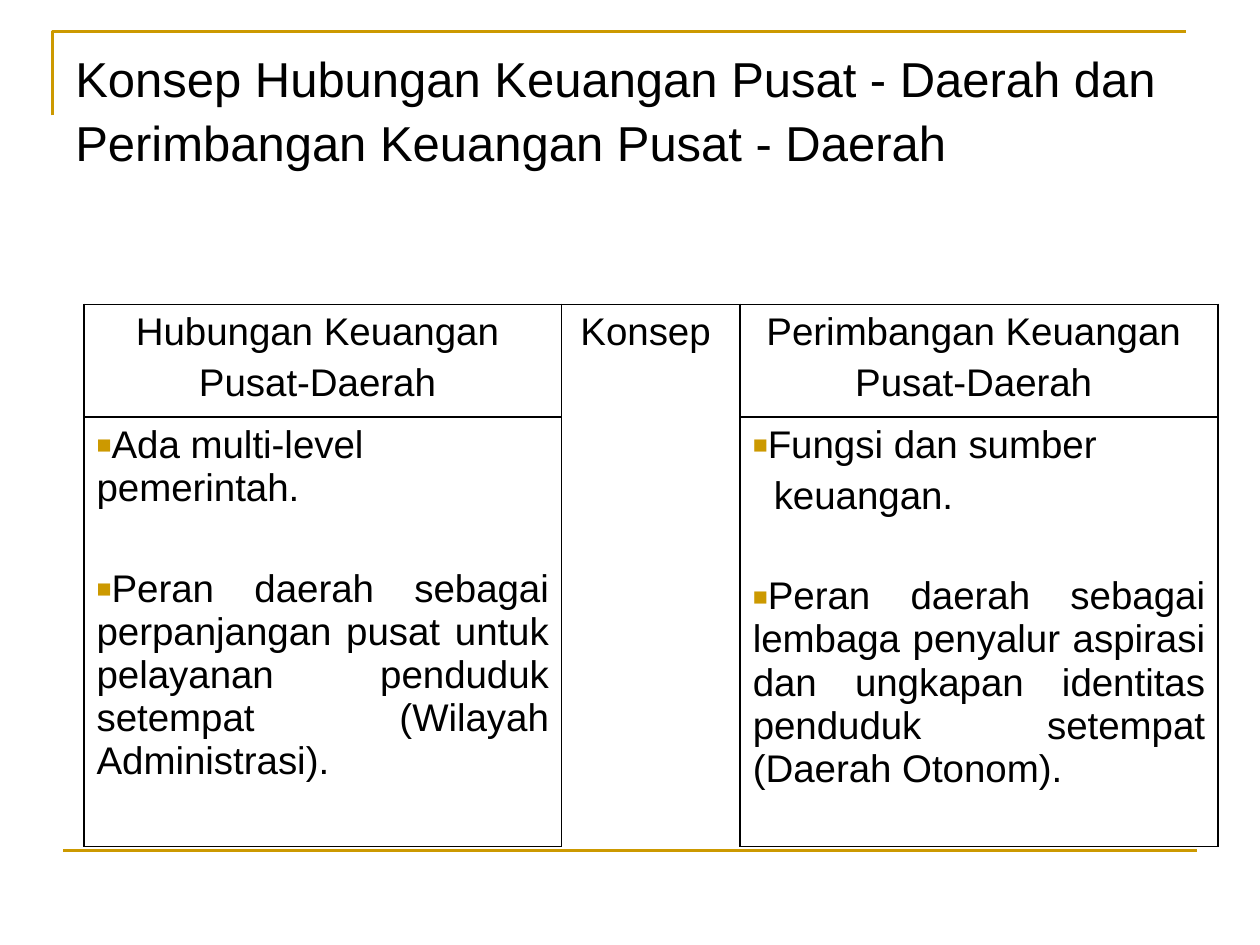
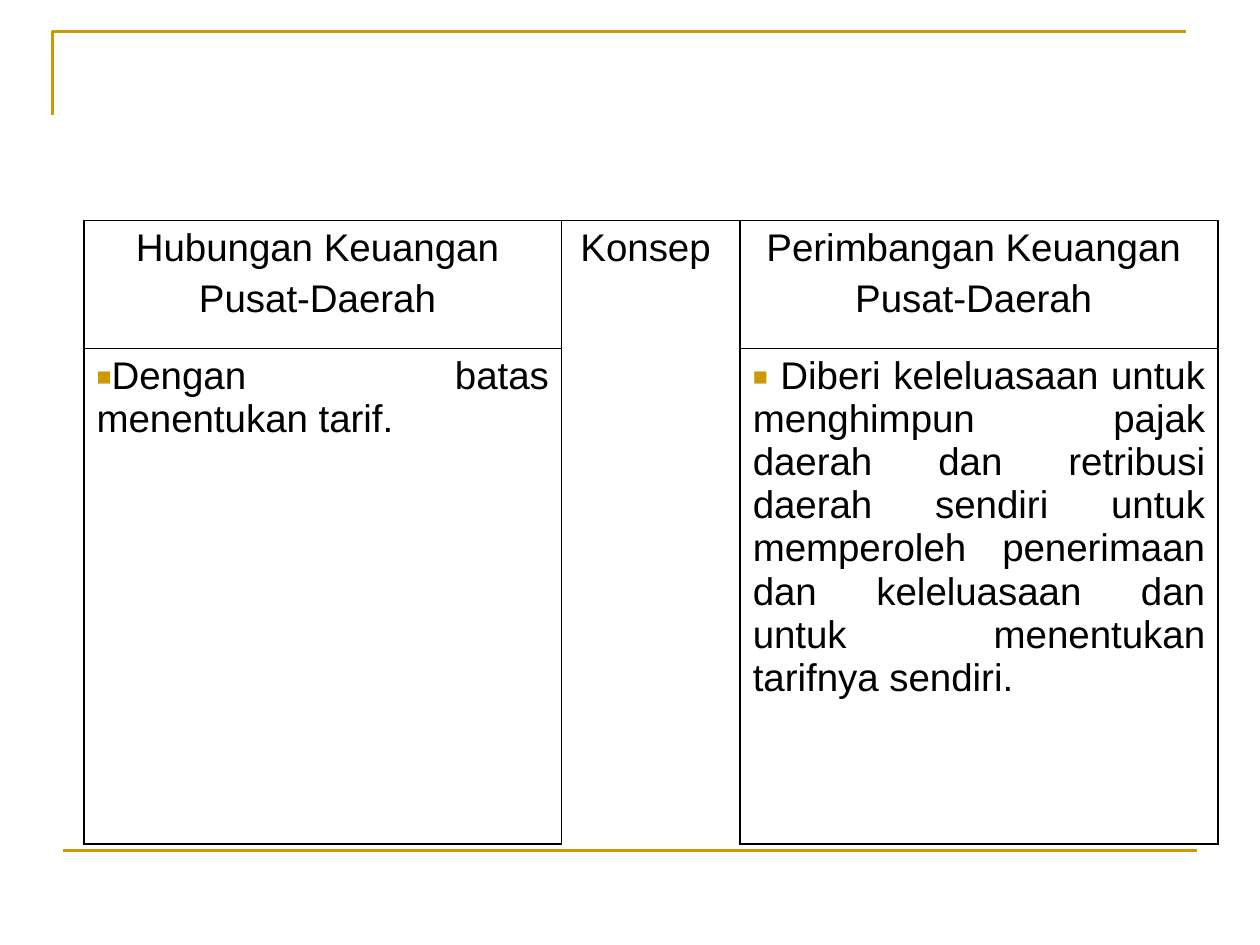
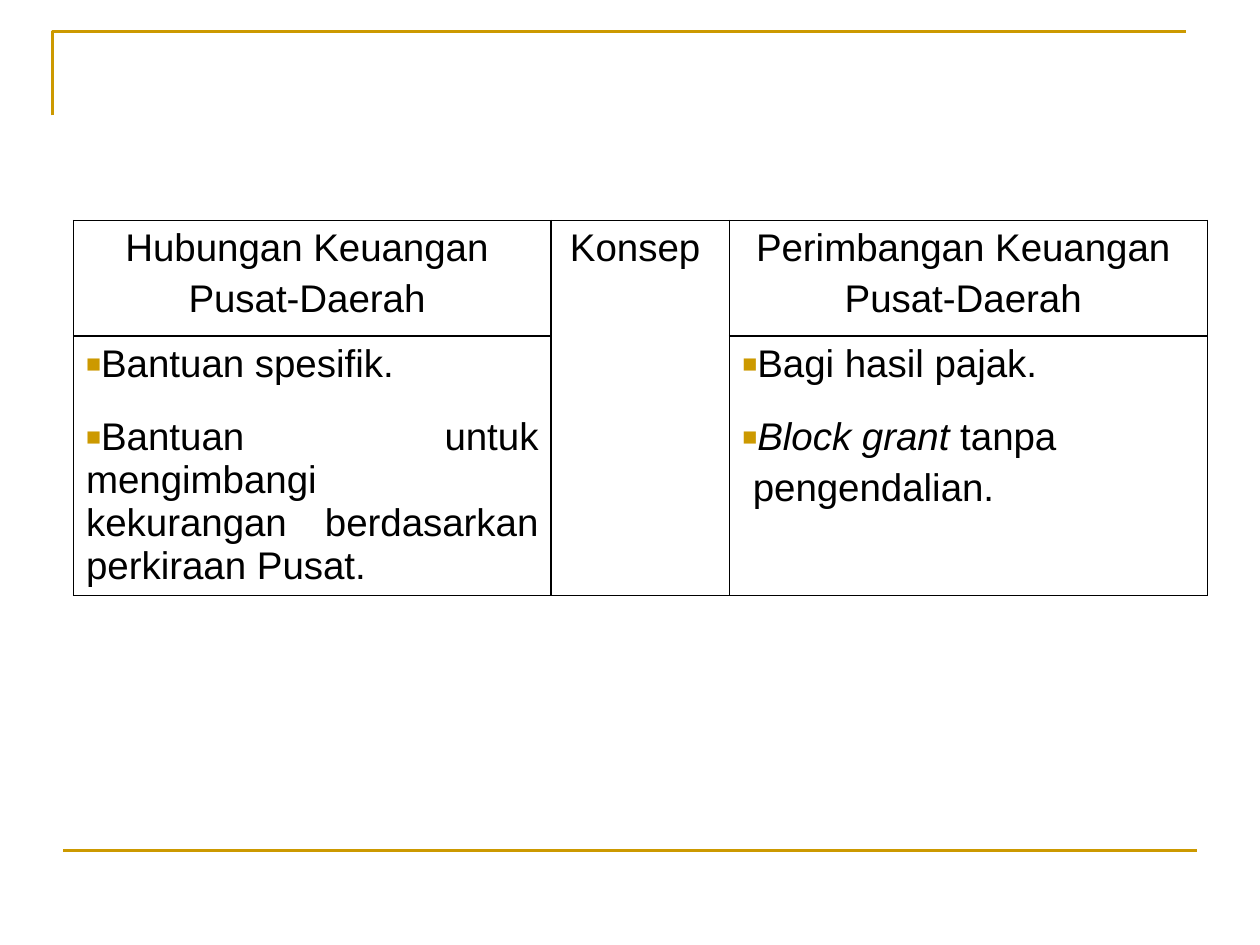
from dataclasses import dataclass

from lxml.etree import SubElement
from pptx import Presentation
from pptx.dml.color import RGBColor
from pptx.enum.shapes import MSO_CONNECTOR
from pptx.enum.text import MSO_ANCHOR, PP_ALIGN as Align
from pptx.oxml import parse_xml
from pptx.oxml.ns import nsdecls, qn
from pptx.util import Inches, Pt


@dataclass(frozen=True)
class Theme:
    font: str = "Arial"
    ink: str = "000000"
    gold: str = "CC9900"
    title: float = 28
    body: float = 22
    rule: float = 1.5
    border: float = 1
    gap: float = 4.4
    wide_gap: float = 33


theme = Theme()
ink = RGBColor.from_string(theme.ink)
gold = RGBColor.from_string(theme.gold)

deck = Presentation()
deck.slide_width, deck.slide_height = Inches(10), Inches(7.5)
unit = deck.slide_width // 120


def grid(*steps):
    return [round(step * unit) for step in steps]


def write(paragraph, text, size, align=Align.LEFT, gap=0, bullet=False, indent=0):
    first, *rest = text.split("|")
    paragraph.text = first
    paragraph.runs[0].font.italic = bool(rest)
    for piece in rest:
        paragraph.add_run().text = piece
    for run in paragraph.runs:
        run.font.name = theme.font
        run.font.size = Pt(size)
        run.font.color.rgb = ink
    paragraph.alignment = align
    paragraph.space_before = Pt(gap)
    settings = paragraph._p.get_or_add_pPr()
    settings.set("marL", str(round(indent * unit)))
    settings.set("indent", "0")
    if bullet:
        colour = SubElement(settings, qn("a:buClr"))
        SubElement(colour, qn("a:srgbClr"), val=theme.gold)
        SubElement(settings, qn("a:buSzPct"), val="65000")
        SubElement(settings, qn("a:buFont"), typeface=theme.font)
        SubElement(settings, qn("a:buChar"), char="■")


heading = "Konsep Hubungan Keuangan Pusat - Daerah dan Perimbangan Keuangan Pusat - Daerah"
column_heads = [
    ["Hubungan Keuangan ", "Pusat-Daerah "],
    ["Konsep "],
    ["Perimbangan Keuangan ", "Pusat-Daerah "],
]
column_widths = 45.5, 17, 45.5

point = dict(align=Align.JUSTIFY, bullet=True)
later_point = dict(point, gap=theme.wide_gap)
continuation = dict(align=Align.JUSTIFY, gap=theme.gap)

comparisons = [
    dict(title=heading, corner=(8, 29), heights=(10.6, 40.9), rows=[
        ([("Ada multi-level pemerintah.", dict(bullet=True)),
          ("Peran daerah sebagai perpanjangan pusat untuk pelayanan penduduk "
           "setempat (Wilayah Administrasi).", later_point)],
         [("Fungsi dan sumber", point),
          ("keuangan.", dict(continuation, indent=2)),
          ("Peran daerah sebagai lembaga penyalur aspirasi dan ungkapan identitas "
           "penduduk setempat (Daerah Otonom).", later_point)]),
    ]),
    dict(title=None, corner=(8, 21), heights=(12.2, 47.2), rows=[
        ([("Dengan batas menentukan tarif.", point)],
         [(" Diberi keleluasaan untuk menghimpun pajak daerah dan retribusi daerah "
           "sendiri untuk memperoleh penerimaan dan keleluasaan dan untuk "
           "menentukan tarifnya sendiri.", point)]),
    ]),
    dict(title=None, corner=(7, 21), heights=(11, 7, 17.7), rows=[
        ([("Bantuan spesifik.", point)],
         [("Bagi hasil pajak.", point)]),
        ([("Bantuan untuk mengimbangi\vkekurangan berdasarkan perkiraan Pusat.", point)],
         [("Block grant| tanpa", point),
          ("pengendalian.", dict(continuation, indent=1))]),
    ]),
]

for comparison in comparisons:
    slide = deck.slides.add_slide(deck.slide_layouts[6])

    outline = slide.shapes.build_freeform(*grid(5, 11))
    outline.add_line_segments([grid(5, 3), grid(113, 3)], close=False)
    bracket = outline.convert_to_shape()
    bracket.shadow.inherit = False
    bracket.fill.background()
    footer_rule = slide.shapes.add_connector(MSO_CONNECTOR.STRAIGHT, *grid(6, 81, 114, 81))
    SubElement(footer_rule._element.spPr, qn("a:effectLst"))
    for rule in (bracket, footer_rule):
        rule.line.color.rgb = gold
        rule.line.width = Pt(theme.rule)

    if comparison["title"]:
        title_frame = slide.shapes.add_textbox(*grid(6, 3.6, 108, 15)).text_frame
        title_frame.word_wrap = True
        title_frame.vertical_anchor = MSO_ANCHOR.TOP
        write(title_frame.paragraphs[0], comparison["title"], theme.title)
        title_frame.paragraphs[0].line_spacing = 1.08

    heights = comparison["heights"]
    last = len(heights) - 1
    table = slide.shapes.add_table(
        len(heights), 3, *grid(*comparison["corner"], sum(column_widths), sum(heights))
    ).table
    table.first_row = table.horz_banding = False
    for column, width in zip(table.columns, grid(*column_widths)):
        column.width = width
    for row, height in zip(table.rows, grid(*heights)):
        row.height = height
    table.cell(0, 1).merge(table.cell(1, 1))

    head_style = dict(align=Align.CENTER, gap=theme.gap)
    contents = [[[(line, head_style) for line in lines] for lines in column_heads]]
    contents += [[left, [], right] for left, right in comparison["rows"]]

    for r, row in enumerate(contents):
        for c, lines in enumerate(row):
            cell = table.cell(r, c)
            cell.fill.background()
            for i, (text, style) in enumerate(lines):
                frame = cell.text_frame
                paragraph = frame.add_paragraph() if i else frame.paragraphs[0]
                spacing = style.get("gap", theme.gap) if i else 0
                write(paragraph, text, theme.body, **dict(style, gap=spacing))

            ruled_above = r == 0 or (r == 1 and c != 1)
            ruled_below = r == last or (r == 0 and c != 1)
            edges = dict(lnL=True, lnR=True, lnT=ruled_above, lnB=ruled_below)
            for position, (edge, ruled) in enumerate(edges.items()):
                paint = "<a:noFill/>"
                if ruled:
                    paint = f'<a:solidFill><a:srgbClr val="{theme.ink}"/></a:solidFill>'
                border = f'<a:{edge} {nsdecls("a")} w="{Pt(theme.border)}">{paint}</a:{edge}>'
                cell._tc.get_or_add_tcPr().insert(position, parse_xml(border))

deck.save("out.pptx")
